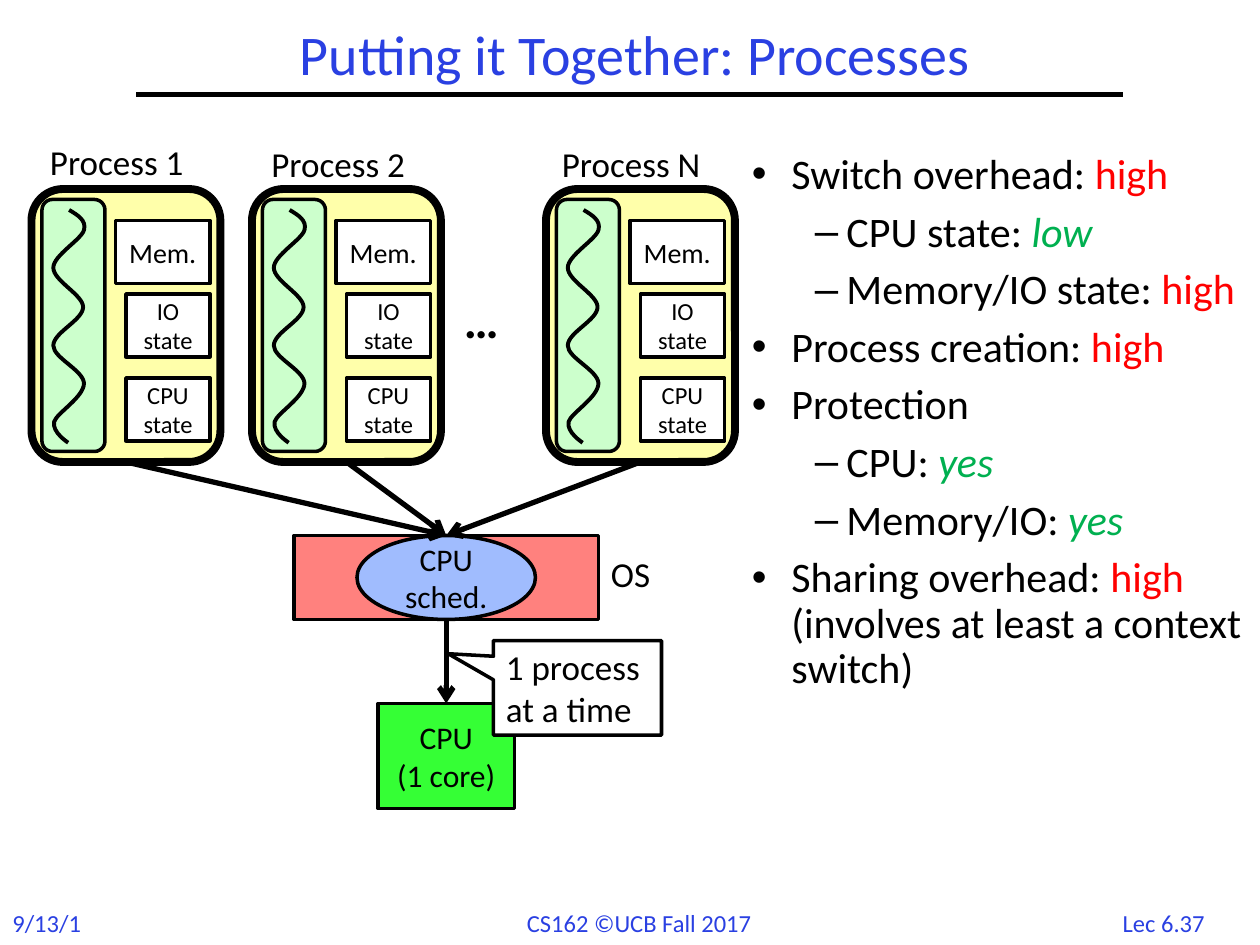
from lxml import etree
from pptx import Presentation
from pptx.dml.color import RGBColor
from pptx.enum import shapes as sh, text as tx
from pptx.oxml.ns import qn
from pptx.util import Pt

BLUE, BLACK, WHITE, RED, GREEN = "2A40E2", "000000", "FFFFFF", "FF0000", "00B050"
LEFT, CENTER = tx.PP_ALIGN.LEFT, tx.PP_ALIGN.CENTER
RECT, ROUND = sh.MSO_SHAPE.RECTANGLE, sh.MSO_SHAPE.ROUNDED_RECTANGLE

TITLE = "Putting it Together: Processes"
BULLETS = [  # level, runs of (text, colour, italic)
    (0, [("Switch overhead: ", BLACK, False), ("high", RED, False)]),
    (1, [("CPU state: ", BLACK, False), ("low", GREEN, True)]),
    (1, [("Memory/IO state: ", BLACK, False), ("high", RED, False)]),
    (0, [("Process creation: ", BLACK, False), ("high", RED, False)]),
    (0, [("Protection", BLACK, False)]),
    (1, [("CPU: ", BLACK, False), ("yes", GREEN, True)]),
    (1, [("Memory/IO: ", BLACK, False), ("yes", GREEN, True)]),
    (0, [("Sharing overhead: ", BLACK, False), ("high", RED, False),
         (" (involves at least a context switch)", BLACK, False)]),
]
INDENTS = [(22.5, -22.5), (54, -18)]  # left margin, first line, by level
LABELS = [  # text, box, format
    ("Lec 6.37", (631.5, 515.5, 67, 24), dict(size=14, color=BLUE, align=CENTER)),
    ("9/13/17", (0, 515.5, 57.5, 24.5), dict(size=14, color=BLUE)),
    ("CS162 ©UCB Fall 2017", (294, 515.5, 150, 24.5), dict(size=14, color=BLUE)),
    ("…", (258, 162, 42.5, 41), dict(size=28, bold=True)),
    ("Process 1", (21.5, 76.5, 91, 31.5), dict(size=20)),
    ("Process 2", (148, 78, 91, 31.5), dict(size=20)),
    ("Process N", (314, 78, 96, 31.5), dict(size=20)),
    ("OS", (342, 312, 40, 31.5), dict(size=20)),
]
PROCESS_LEFTS, PROCESS_TOP, PROCESS_SIZE = (312, 144, 18), 108, (108, 156)
PROCESS_PARTS = [  # text, box within the process, size
    ("CPU\nstate", (54, 108, 48, 36), 14),
    ("IO\nstate", (54, 60, 48, 36), 14),
    ("Mem.", (48, 18, 54, 36), 16),
]
THREAD_BOX = (6, 6, 36, 144)
THREAD_CURVE = [  # start, then three Bézier points per segment
    (21.5, 12),
    (26.5, 15), (31.5, 18), (30, 23.5),
    (28.5, 29), (12.5, 38), (12.5, 45),
    (12.5, 52.5), (29.5, 60.5), (29.5, 67.5),
    (29.5, 75), (12.5, 82), (12.5, 89.5),
    (12.5, 96.5), (29.5, 103.5), (30, 111),
    (30, 119), (14.5, 128), (13, 133),
    (11.5, 139), (21, 145), (21, 145),
]


def rgb(color):
    return RGBColor.from_string(color)


def pts(values):
    return [Pt(v) for v in values]


def add_run(p, text, size, color=BLACK, bold=False, italic=False):
    r = p.add_run()
    r.text = text
    f = r.font
    f.name, f.size, f.bold, f.italic = "Calibri", Pt(size), bold, italic
    f.color.rgb = rgb(color)


def write(tf, text, align=LEFT, **fmt):
    for i, line in enumerate(text.split("\n")):
        p = tf.add_paragraph() if i else tf.paragraphs[0]
        p.alignment = align
        add_run(p, line, **fmt)


def add_label(text, box, **fmt):
    tf = s.shapes.add_textbox(*pts(box)).text_frame
    tf.word_wrap = False
    write(tf, text, **fmt)


def add_box(parent, kind, box, fill, text="", width=2, align=CENTER, **fmt):
    sp = parent.shapes.add_shape(kind, *pts(box))
    sp.shadow.inherit = False
    sp.fill.solid()
    sp.fill.fore_color.rgb = rgb(fill)
    sp.line.color.rgb = rgb(BLACK)
    sp.line.width = Pt(width)
    if text:
        sp.text_frame.vertical_anchor = tx.MSO_ANCHOR.MIDDLE
        write(sp.text_frame, text, align=align, **fmt)
    return sp


def add_line(start=(0, 0), end=(0, 0), arrow=False):
    c = s.shapes.add_connector(sh.MSO_CONNECTOR.STRAIGHT, *pts(start + end))
    c.line.color.rgb = rgb(BLACK)
    c.line.width = Pt(3)
    if arrow:
        etree.SubElement(c.line._get_or_add_ln(), qn("a:tailEnd"), type="arrow")
    etree.SubElement(c._element.spPr, qn("a:effectLst"))
    return c


def add_arrow(source, target):
    """Arrow from the bottom of one shape to the top of another."""
    c = add_line(arrow=True)
    c.begin_connect(source, 2)
    c.end_connect(target, 0)


def add_thread(parent, left, top):
    """Wavy open line; every three straight steps become one Bézier segment."""
    points = [(Pt(left + x), Pt(top + y)) for x, y in THREAD_CURVE]
    fb = parent.shapes.build_freeform(*points[0])
    fb.add_line_segments(points[1:], close=False)
    sp = fb.convert_to_shape()
    sp.shadow.inherit = False
    sp.fill.background()
    sp.line.color.rgb = rgb(BLACK)
    sp.line.width = Pt(2.25)
    steps = list(sp._element.iter(qn("a:lnTo")))
    for i in range(0, len(steps), 3):
        curve = etree.SubElement(steps[i].getparent(), qn("a:cubicBezTo"))
        for step in steps[i:i + 3]:
            curve.append(step[0])
            step.getparent().remove(step)


def add_process(left):
    group = s.shapes.add_group_shape()

    def within(box):
        return (left + box[0], PROCESS_TOP + box[1]) + box[2:]

    body = add_box(group, ROUND, within((0, 0) + PROCESS_SIZE), "FFFFAA", width=4.5)
    for text, box, size in PROCESS_PARTS:
        add_box(group, RECT, within(box), WHITE, text, size=size)
    add_box(group, ROUND, within(THREAD_BOX), "CCFFCC")
    add_thread(group, left, PROCESS_TOP)
    return body


def place(sp, box):
    sp.left, sp.top, sp.width, sp.height = pts(box)
    sp.text_frame.auto_size = tx.MSO_AUTO_SIZE.NONE
    return sp.text_frame


prs = Presentation()
prs.slide_width, prs.slide_height = Pt(720), Pt(540)
s = prs.slides.add_slide(prs.slide_layouts[1])

tf = place(s.shapes.title, (24, 12, 678, 42))
tf.vertical_anchor = tx.MSO_ANCHOR.MIDDLE
write(tf, TITLE, align=CENTER, size=32, color=BLUE)
tf.paragraphs[0].line_spacing = 0.9
add_line((78, 54), (642, 54))

tf = place(s.placeholders[1], (422.5, 84, 297.5, 306))
for i, (level, runs) in enumerate(BULLETS):
    p = tf.add_paragraph() if i else tf.paragraphs[0]
    p.level, p.line_spacing, p.space_before = level, 0.9, Pt(7)
    margin, first = pts(INDENTS[level])
    pPr = p._p.get_or_add_pPr()
    pPr.set("marL", str(margin))
    pPr.set("indent", str(first))
    for text, color, italic in runs:
        add_run(p, text, 24, color, italic=italic)

for text, box, fmt in LABELS:
    add_label(text, box, **fmt)

system = add_box(s, RECT, (168, 306, 174, 48), "FF817E")
scheduler = add_box(s, sh.MSO_SHAPE.OVAL, (204, 306, 102, 48), "A0BCFE", "CPU sched.", size=18)
cpu = add_box(s, RECT, (216, 402, 78, 60), "35FF35", "CPU\n(1 core)", size=18)
add_arrow(system, cpu)
for left in PROCESS_LEFTS:
    add_arrow(add_process(left), scheduler)

callout = add_box(s, sh.MSO_SHAPE.RECTANGULAR_CALLOUT, (282, 366, 96, 54), WHITE,
                  "1 process at a time", align=LEFT, size=20)
callout.adjustments[0], callout.adjustments[1] = -0.77, -0.36

prs.save("out.pptx")
